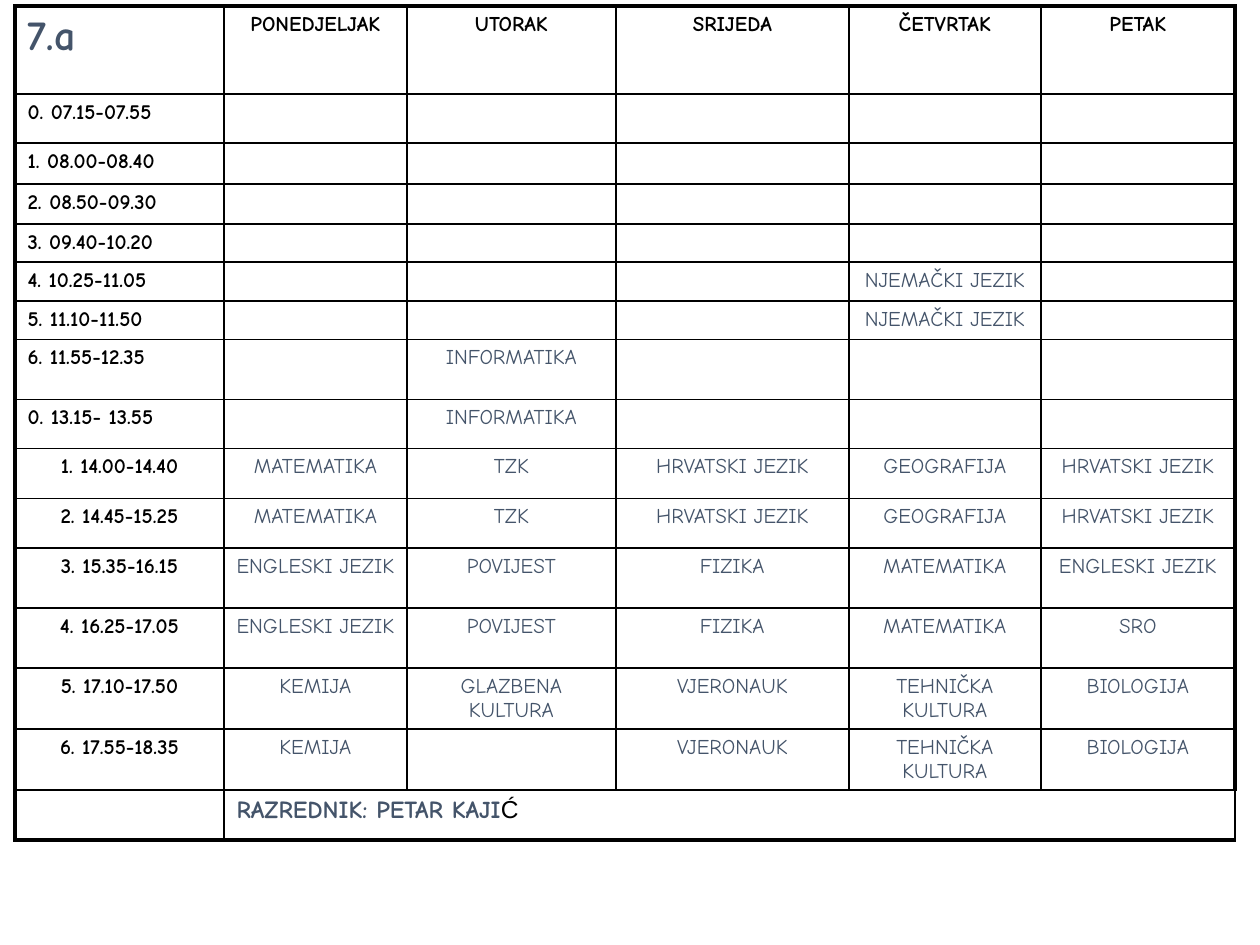
import pptx
import pptx.dml.color
import pptx.enum.text
import pptx.oxml.ns
import pptx.util
from lxml import etree

BLACK = pptx.dml.color.RGBColor(0x00, 0x00, 0x00)
SLATE = pptx.dml.color.RGBColor(0x44, 0x54, 0x6A)
PIXEL = pptx.util.Inches(1) // 126
LEFT = pptx.enum.text.PP_ALIGN.LEFT
CENTER = pptx.enum.text.PP_ALIGN.CENTER

COLUMN_WIDTHS = [209, 183, 209, 233, 192, 194]
ROW_HEIGHTS = [88, 49, 41, 40, 37, 39, 37, 60, 49, 50, 50, 60, 60, 61, 61, 50]
DAYS = ["PONEDJELJAK", "UTORAK", "SRIJEDA", "ČETVRTAK", "PETAK"]
MORNING = [
    ["0. 07.15-07.55", "", "", "", "", ""],
    ["1. 08.00-08.40", "", "", "", "", ""],
    ["2. 08.50-09.30", "", "", "", "", ""],
    ["3. 09.40-10.20", "", "", "", "", ""],
    ["4. 10.25-11.05", "", "", "", "NJEMAČKI JEZIK", ""],
    ["5. 11.10-11.50", "", "", "", "NJEMAČKI JEZIK", ""],
    ["6. 11.55-12.35", "", "INFORMATIKA", "", "", ""],
    ["0. 13.15- 13.55", "", "INFORMATIKA", "", "", ""],
]
AFTERNOON = [
    ["1. 14.00-14.40", "MATEMATIKA", "TZK", "HRVATSKI JEZIK", "GEOGRAFIJA", "HRVATSKI JEZIK"],
    ["2. 14.45-15.25", "MATEMATIKA", "TZK", "HRVATSKI JEZIK", "GEOGRAFIJA", "HRVATSKI JEZIK"],
    ["3. 15.35-16.15", "ENGLESKI JEZIK", "POVIJEST", "FIZIKA", "MATEMATIKA", "ENGLESKI JEZIK"],
    ["4. 16.25-17.05", "ENGLESKI JEZIK", "POVIJEST", "FIZIKA", "MATEMATIKA", "SRO"],
    ["5. 17.10-17.50", "KEMIJA", "GLAZBENA KULTURA", "VJERONAUK", "TEHNIČKA KULTURA", "BIOLOGIJA"],
    ["6. 17.55-18.35", "KEMIJA", "", "VJERONAUK", "TEHNIČKA KULTURA", "BIOLOGIJA"],
]


class TimetableSlide:
    font_name = "Comic Neue"
    text_size = 12
    inner_line = 1
    outer_line = 2.25

    def __init__(self, slide):
        self.slide = slide

    def table(self, left, top, widths, heights):
        frame = self.slide.shapes.add_table(
            len(heights), len(widths), left * PIXEL, top * PIXEL,
            sum(widths) * PIXEL, sum(heights) * PIXEL)
        table = frame.table
        table.first_row = table.horz_banding = False
        for column, width in zip(table.columns, widths):
            column.width = width * PIXEL
        for row, height in zip(table.rows, heights):
            row.height = height * PIXEL
        for r in range(len(heights)):
            for c in range(len(widths)):
                cell = table.cell(r, c)
                cell.fill.background()
                self.borders(cell, {
                    "L": c == 0, "R": c == len(widths) - 1,
                    "T": r == 0, "B": r == len(heights) - 1})
                self.empty_text(cell)
        return table

    def borders(self, cell, outer_sides):
        """Draw all four sides; those flagged as outer are thick."""
        properties = cell._tc.get_or_add_tcPr()
        for index, (side, outer) in enumerate(outer_sides.items()):
            width = pptx.util.Pt(self.outer_line if outer else self.inner_line)
            line = etree.Element(pptx.oxml.ns.qn(f"a:ln{side}"), w=str(int(width)))
            fill = etree.SubElement(line, pptx.oxml.ns.qn("a:solidFill"))
            etree.SubElement(fill, pptx.oxml.ns.qn("a:srgbClr"), val=str(BLACK))
            properties.insert(index, line)

    def empty_text(self, cell):
        """Keep an empty cell from growing its row."""
        paragraph = cell.text_frame.paragraphs[0]
        etree.SubElement(paragraph._p, pptx.oxml.ns.qn("a:endParaRPr"),
                         sz=str(self.text_size * 100))

    def style(self, font, size, color, bold, name=font_name):
        font.name = name
        font.size = pptx.util.Pt(size)
        font.color.rgb = color
        font.bold = bold

    def text(self, cell, text, color=BLACK, bold=True, align=CENTER, size=text_size):
        paragraph = cell.text_frame.paragraphs[0]
        paragraph.alignment = align
        paragraph.add_run().text = text
        self.style(paragraph.font, size, color, bold)

    def two_font_text(self, cell, text, last_letter, size):
        paragraph = cell.text_frame.paragraphs[0]
        for part, color, bold, name in [(text, SLATE, True, self.font_name),
                                        (last_letter, BLACK, False, "Arial")]:
            run = paragraph.add_run()
            run.text = part
            self.style(run.font, size, color, bold, name)


def main():
    presentation = pptx.Presentation()
    presentation.slide_width = pptx.util.Inches(10)
    presentation.slide_height = pptx.util.Inches(7.5)
    page = TimetableSlide(presentation.slides.add_slide(presentation.slide_layouts[6]))

    table = page.table(15, 6, COLUMN_WIDTHS, ROW_HEIGHTS)
    page.text(table.cell(0, 0), "7.a", SLATE, align=LEFT, size=24)
    for column, day in enumerate(DAYS, start=1):
        page.text(table.cell(0, column), day)

    for row, (time, *subjects) in enumerate(MORNING + AFTERNOON, start=1):
        time_align = LEFT if row <= len(MORNING) else CENTER
        page.text(table.cell(row, 0), time, align=time_align)
        for column, subject in enumerate(subjects, start=1):
            if subject:
                page.text(table.cell(row, column), subject, SLATE, bold=False)

    last_row = len(ROW_HEIGHTS) - 1
    teacher = table.cell(last_row, 1)
    teacher.merge(table.cell(last_row, len(DAYS)))
    page.two_font_text(teacher, "RAZREDNIK: PETAR KAJI", "Ć", 14)

    presentation.save("out.pptx")


if __name__ == "__main__":
    main()
